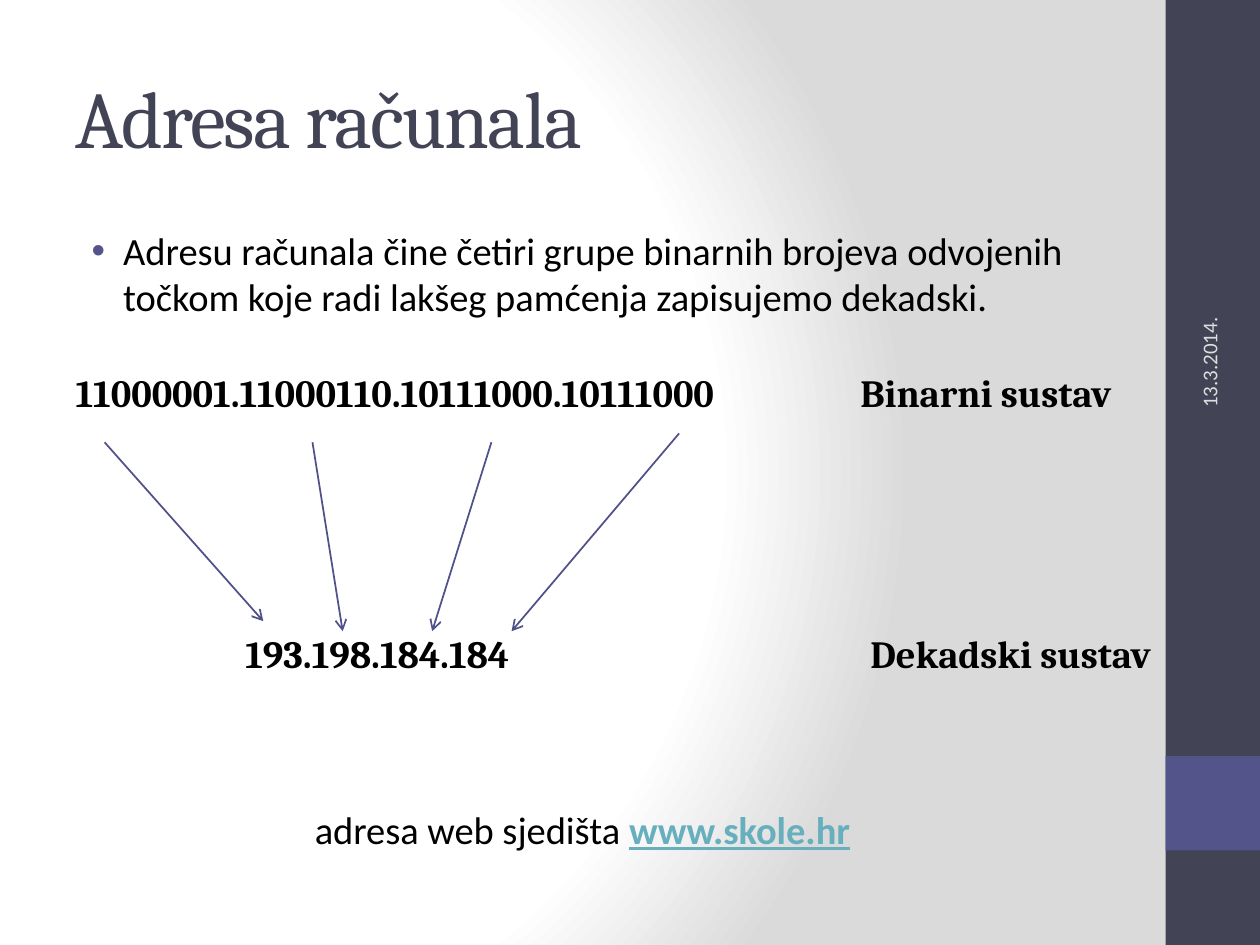
from pptx import Presentation
from pptx.dml.color import RGBColor
from pptx.enum.shapes import MSO_CONNECTOR as Line, MSO_SHAPE as Shape
from pptx.enum.text import MSO_ANCHOR as Anchor, MSO_AUTO_SIZE as Fit, PP_ALIGN as Align
from pptx.oxml import parse_xml
from pptx.oxml.ns import nsdecls
from pptx.util import Inches, Pt
from lxml.etree import SubElement
from pptx.oxml.ns import qn

HUES = {"dark": "424456", "violet": "53548A", "arrow": "505188", "date": "DEDEDE",
        "text": "000000", "link": "67AFBD", "white": "FFFFFF", "gray": "DADADA"}
HEAD, BODY = "Cambria", "Calibri"


def hue(name):
    return RGBColor.from_string(HUES[name])


def add_run(para, text, size=22, font=BODY, color="text", bold=False, under=False):
    run = para.add_run()
    run.text = text
    face = run.font
    face.size, face.name, face.bold = Pt(size), font, bold
    face.color.rgb = hue(color)
    if under:
        face.underline = True
    return run


def add_box(slide, box, anchor=Anchor.TOP, wrap=True):
    """Add a text box; return it with its first paragraph."""
    shape = slide.shapes.add_textbox(*map(Inches, box))
    frame = shape.text_frame
    frame.word_wrap = wrap
    frame.vertical_anchor = anchor
    frame.auto_size = Fit.NONE if wrap else Fit.SHAPE_TO_FIT_TEXT
    return shape, frame.paragraphs[0]


def add_back(slide):
    stops = "".join(
        f'<a:gs pos="{pos}000"><a:srgbClr val="{HUES[name]}"/></a:gs>'
        for pos, name in ((0, "white"), (75, "white"), (100, "gray")))
    back = parse_xml(
        f'<p:bg {nsdecls("p", "a")}><p:bgPr><a:gradFill rotWithShape="1">'
        f'<a:gsLst>{stops}</a:gsLst><a:path path="circle">'
        '<a:fillToRect l="20000" t="50000" r="100000" b="50000"/></a:path>'
        '</a:gradFill><a:effectLst/></p:bgPr></p:bg>')
    slide.element.cSld.insert(0, back)


def add_side(slide, left, top, width, height):
    """Add the side bar with its square accent and the turned date."""
    parts = ((top, height, "dark"), (top + 0.8 * height, width, "violet"))
    for y, tall, color in parts:
        bar = slide.shapes.add_shape(Shape.RECTANGLE, *map(Inches, (left, y, width, tall)))
        bar.shadow.inherit = False
        bar.fill.solid()
        bar.fill.fore_color.rgb = hue(color)
        bar.line.fill.background()
    date, para = add_box(slide, (left - 0.99, top + 1.8, 2.67, 0.4), Anchor.MIDDLE)
    date.rotation = 270
    add_run(para, "13.3.2014.", 12, color="date")


def add_title(slide, *box):
    para = add_box(slide, box, Anchor.MIDDLE)[1]
    run = add_run(para, "Adresa računala", 46, HEAD, "dark")
    run.font._element.set("spc", "-100")


def add_body(slide, *box):
    para = add_box(slide, box)[1]
    props = para._p.get_or_add_pPr()
    props.set("marL", str(Inches(0.38)))
    props.set("indent", str(Inches(-0.25)))
    tint = SubElement(props, qn("a:buClr"))
    SubElement(tint, qn("a:srgbClr")).set("val", HUES["violet"])
    SubElement(props, qn("a:buFont")).set("typeface", "Arial")
    SubElement(props, qn("a:buChar")).set("char", "•")
    add_run(para, "Adresu računala čine četiri grupe binarnih brojeva odvojenih "
                  "točkom koje radi lakšeg pamćenja zapisujemo dekadski.")


def add_arrow(slide, start, end):
    link = slide.shapes.add_connector(Line.STRAIGHT, *map(Inches, start + end))
    link.line.color.rgb = hue("arrow")
    link.line.width = Pt(1)
    SubElement(link.line._get_or_add_ln(), qn("a:tailEnd")).set("type", "arrow")
    SubElement(link._element.spPr, qn("a:effectLst"))


def add_map(slide, left, top):
    """Add the binary address, the decimal one and the arrows between them."""
    low = top + 2.07
    rows = (
        ((left, top, 6.25), "11000001.11000110.10111000.10111000", True),
        ((left + 1.68, low, 2.61), "193.198.184.184", True),
        ((left + 6.72, top, 2.24), "Binarni sustav", False),
        ((left + 6.8, low, 2.5), "Dekadski sustav", False),
    )
    for box, text, mid in rows:
        para = add_box(slide, box + (0.47,), Anchor.MIDDLE if mid else Anchor.TOP, False)[1]
        para.alignment = Align.CENTER if mid else Align.LEFT
        add_run(para, text, font=HEAD, bold=True)
    arrows = ((0.82, 0.63, 2.08, 2.05), (2.47, 0.63, 2.71, 2.13),
              (3.89, 0.63, 3.42, 2.13), (5.38, 0.56, 4.05, 2.13))
    for x1, y1, x2, y2 in arrows:
        add_arrow(slide, (left + x1, top + y1), (left + x2, top + y2))


def add_site(slide, *box):
    para = add_box(slide, box, wrap=False)[1]
    add_run(para, "adresa web sjedišta ")
    add_run(para, "www.skole.hr", color="link", bold=True, under=True)


def main():
    deck = Presentation()
    deck.slide_width, deck.slide_height = Inches(10), Inches(7.5)
    slide = deck.slides.add_slide(deck.slide_layouts[6])
    add_back(slide)
    add_side(slide, 9.25, 0, 0.75, 7.5)
    add_title(slide, 0.5, 0.3, 8.33, 1.25)
    add_body(slide, 0.5, 1.75, 8.33, 5.25)
    add_map(slide, 0.01, 2.88)
    add_site(slide, 2.4, 6.35, 4.5, 0.47)
    deck.save("out.pptx")


if __name__ == "__main__":
    main()
